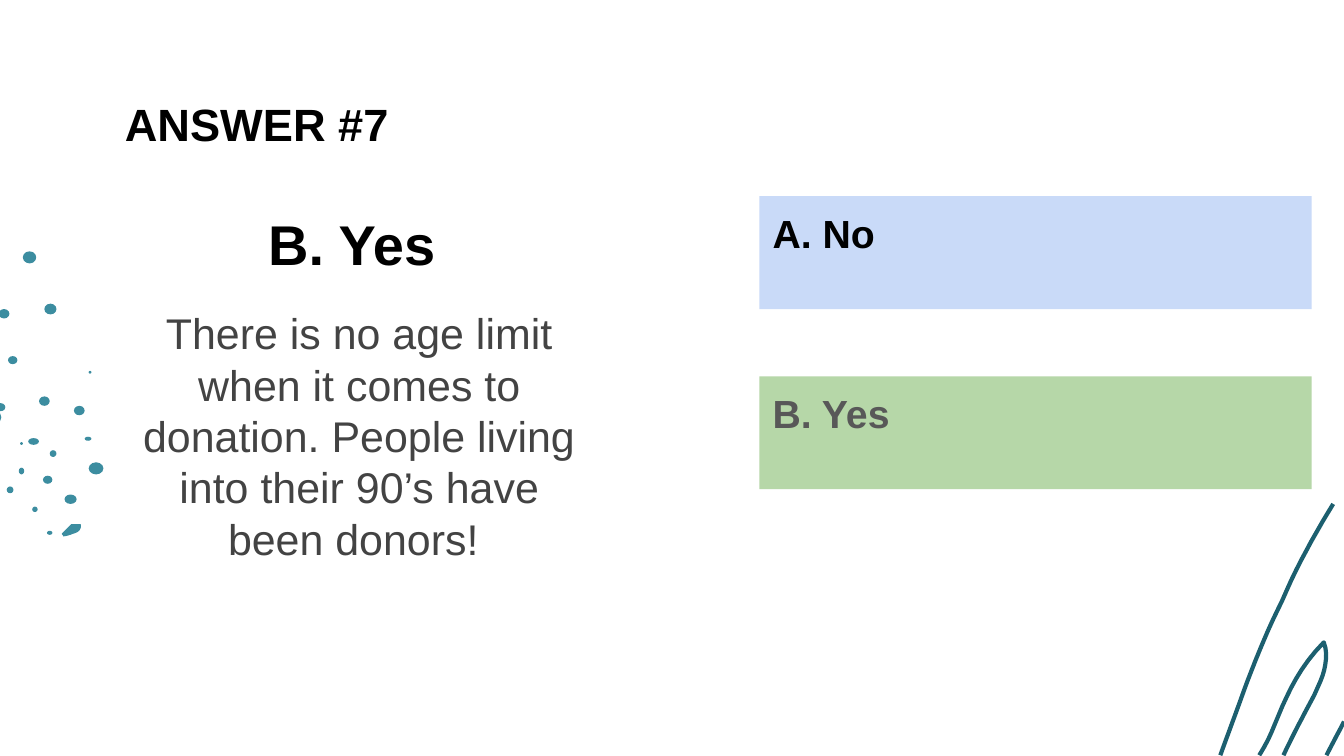
import pptx
import pptx.dml.color
import pptx.enum.shapes
import pptx.enum.text
import pptx.util

Inches = pptx.util.Inches
Shape = pptx.enum.shapes.MSO_SHAPE
Align = pptx.enum.text.PP_ALIGN
Anchor = pptx.enum.text.MSO_ANCHOR

WIDTH, HEIGHT = 10, 5.625
BOTTOM = 5.62
UNITS = 1000  # freeform units to the inch
FONT = "Arial"
BLACK, DOT_COLOUR, STROKE_COLOUR = "000000", "3C8DA0", "1C5F6F"

TITLE = [("ANSWER #7", {"size": 24.2, "bold": True}, BLACK, {})]
ANSWER = [
    ("B. Yes ", {"size": 30, "bold": True}, BLACK, {"alignment": Align.CENTER}),
    ("There is no age limit when it comes to donation. "
     "People living into their 90’s have been donors! ",
     {"size": 23, "bold": False}, "434343",
     {"alignment": Align.CENTER, "space_before": pptx.util.Pt(16)}),
]
OPTIONS = [("A. No", "C9DAF8", BLACK), ("B. Yes", "B6D7A8", "585858")]
OPTION_LEFT, OPTION_TOP, OPTION_PITCH = 5.65, 1.46, 1.34
OPTION_WIDTH, OPTION_HEIGHT, LABEL_HEIGHT = 4.11, 0.84, 0.56

# left, top, width, height
DOTS = [
    (-0.12, 3.05, 0.13, 0.11), (0.15, 3.29, 0.02, 0.02), (0.14, 3.48, 0.04, 0.05),
    (0.24, 3.77, 0.04, 0.04), (0.35, 3.95, 0.04, 0.03), (0.48, 3.68, 0.09, 0.07),
    (0.32, 3.54, 0.07, 0.06), (0.05, 3.62, 0.05, 0.05), (0.37, 3.35, 0.05, 0.05),
    (0.21, 3.26, 0.08, 0.05), (0.29, 2.95, 0.08, 0.07), (-0.03, 3, 0.07, 0.06),
    (0.06, 2.65, 0.07, 0.06), (-0.01, 2.3, 0.08, 0.07), (0.66, 2.76, 0.02, 0.02),
    (0.55, 3.02, 0.08, 0.07), (0.63, 3.25, 0.05, 0.03), (0.66, 3.44, 0.11, 0.09),
    (0.33, 2.26, 0.09, 0.08), (0.17, 1.87, 0.1, 0.09),
]

# Bezier chains: a start point, then two handles and an end for each piece
LEAF = [(0.56, 3.9), (0.55, 3.9), (0.54, 3.9), (0.53, 3.9),
        (0.51, 3.92), (0.48, 3.95), (0.46, 3.97),
        (0.46, 3.98), (0.47, 3.98), (0.47, 3.99),
        (0.5, 3.99), (0.52, 3.98), (0.55, 3.97),
        (0.59, 3.96), (0.61, 3.93), (0.6, 3.9)]
STROKES = [
    [(9.92, 3.75), (9.78, 3.98), (9.65, 4.21), (9.54, 4.47),
     (9.42, 4.71), (9.32, 4.96), (9.23, 5.21),
     (9.18, 5.35), (9.13, 5.48), (9.08, BOTTOM)],
    [(9.37, BOTTOM), (9.4, 5.57), (9.43, 5.52), (9.46, 5.45),
     (9.55, 5.24), (9.63, 5), (9.85, 4.78),
     (9.9, 4.92), (9.83, 5.06), (9.78, 5.17),
     (9.7, 5.32), (9.62, 5.47), (9.55, BOTTOM)],
    [(9.87, BOTTOM), (9.91, 5.54), (9.96, 5.45), (WIDTH, 5.37)],
]


def colour(value):
    return pptx.dml.color.RGBColor.from_string(value)


def paint(shape, fill=None, line=None):
    shape.shadow.inherit = False
    if fill:
        shape.fill.solid()
        shape.fill.fore_color.rgb = colour(fill)
    else:
        shape.fill.background()
    if line:
        shape.line.color.rgb = colour(line)
        shape.line.width = pptx.util.Pt(2.25)
    else:
        shape.line.fill.background()


def add_preset(page, kind, place, fill):
    paint(page.shapes.add_shape(kind, *map(Inches, place)), fill=fill)


def sample(chain):
    """Return points along a Bezier chain, ten for each piece, in freeform units."""
    points = [chain[0]]
    for first in range(0, len(chain) - 1, 3):
        piece = chain[first:first + 4]
        for step in range(1, 11):
            t = step / 10
            weights = ((1 - t) ** 3, 3 * t * (1 - t) ** 2, 3 * t * t * (1 - t), t ** 3)
            points.append([sum(w * p[axis] for w, p in zip(weights, piece))
                           for axis in (0, 1)])
    return [(round(x * UNITS), round(y * UNITS)) for x, y in points]


def add_curves(page, chains, closed=False, **paints):
    """Draw Bezier chains as the contours of one freeform."""
    contours = [sample(chain) for chain in chains]
    builder = page.shapes.build_freeform(*contours[0][0], scale=Inches(1) / UNITS)
    for index, contour in enumerate(contours):
        if index:
            builder.move_to(*contour[0])
        builder.add_line_segments(contour[1:], close=closed)
    paint(builder.convert_to_shape(), **paints)


def add_text(page, place, paragraphs, anchor=Anchor.TOP):
    frame = page.shapes.add_textbox(*map(Inches, place)).text_frame
    frame.word_wrap = True
    frame.vertical_anchor = anchor
    for side in ("left", "top", "right", "bottom"):
        setattr(frame, f"margin_{side}", Inches(0.1))
    for index, (words, font, ink, layout) in enumerate(paragraphs):
        para = frame.add_paragraph() if index else frame.paragraphs[0]
        for name, value in layout.items():
            setattr(para, name, value)
        span = para.add_run()
        span.text = words
        span.font.color.rgb = colour(ink)
        formats = {**font, "name": FONT, "size": pptx.util.Pt(font["size"])}
        for name, value in formats.items():
            setattr(span.font, name, value)


def main():
    deck = pptx.Presentation()
    deck.slide_width, deck.slide_height = Inches(WIDTH), Inches(HEIGHT)
    page = deck.slides.add_slide(deck.slide_layouts[6])

    add_curves(page, [LEAF], closed=True, fill=DOT_COLOUR)
    for place in DOTS:
        add_preset(page, Shape.OVAL, place, DOT_COLOUR)
    add_curves(page, STROKES, line=STROKE_COLOUR)

    add_text(page, (0.88, 1.46, 3.59, 3.84), ANSWER)
    add_text(page, (0.83, 0.6, 8.92, 0.63), TITLE, Anchor.MIDDLE)
    for row, (label, fill, ink) in enumerate(OPTIONS):
        corner = (OPTION_LEFT, OPTION_TOP + row * OPTION_PITCH, OPTION_WIDTH)
        add_preset(page, Shape.RECTANGLE, (*corner, OPTION_HEIGHT), fill)
        add_text(page, (*corner, LABEL_HEIGHT),
                 [(label, {"size": 21, "bold": True}, ink, {})])

    deck.save("out.pptx")


if __name__ == "__main__":
    main()
